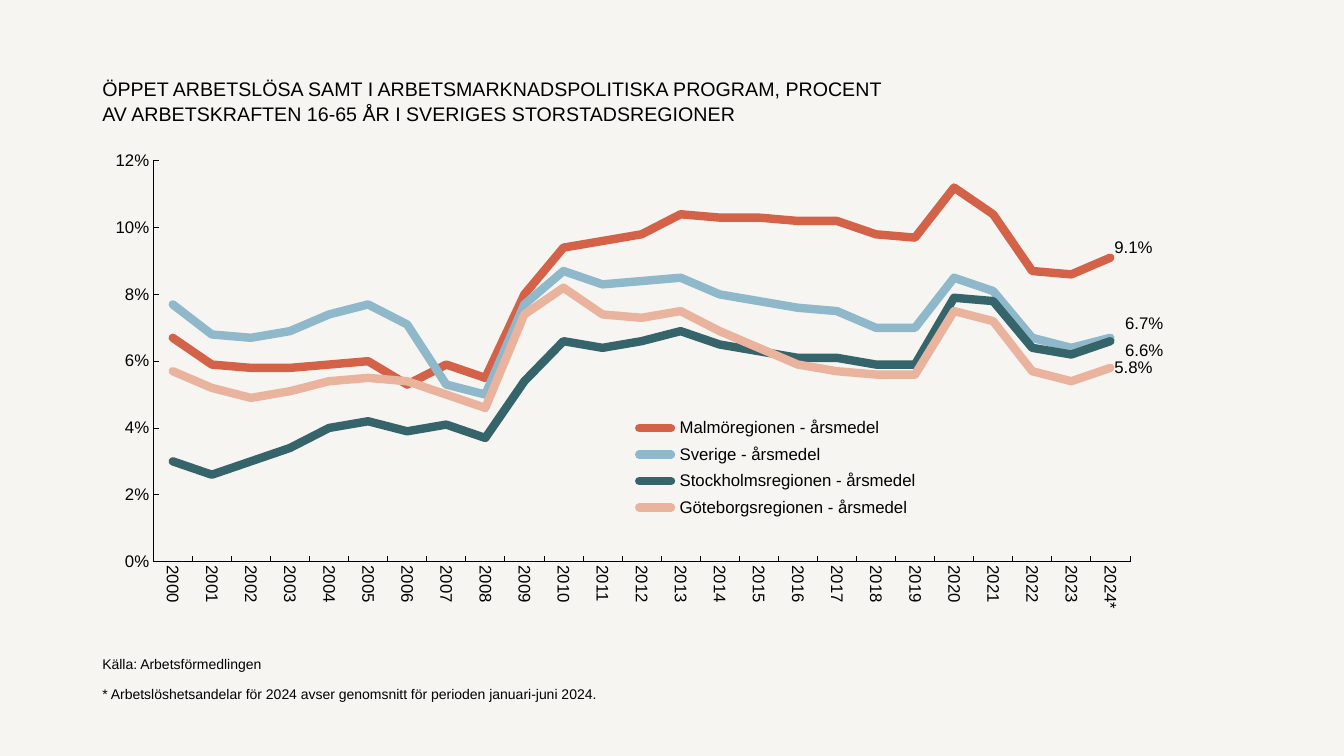
import pptx
import pptx.chart.data
import pptx.dml.color
import pptx.enum.chart
import pptx.enum.text
import pptx.oxml
import pptx.oxml.ns
import pptx.util

Pt = pptx.util.Pt
FONT = "Arial"
BLACK = "000000"
YEARS = [str(year) for year in range(2000, 2024)] + ["2024*"]

# Region, colour, end label offset (share of chart width and height), percent per year
REGIONS = [
    ("Malmöregionen", "D36248", (0, -0.02),
     [6.7, 5.9, 5.8, 5.8, 5.9, 6.0, 5.3, 5.9, 5.5, 8.0, 9.4, 9.6, 9.8, 10.4, 10.3,
      10.3, 10.2, 10.2, 9.8, 9.7, 11.2, 10.4, 8.7, 8.6, 9.1]),
    ("Sverige", "8FB8CA", (0.01, -0.03),
     [7.7, 6.8, 6.7, 6.9, 7.4, 7.7, 7.1, 5.3, 5.0, 7.7, 8.7, 8.3, 8.4, 8.5, 8.0,
      7.8, 7.6, 7.5, 7.0, 7.0, 8.5, 8.1, 6.7, 6.4, 6.7]),
    ("Stockholmsregionen", "36646B", (0.01, 0.02),
     [3.0, 2.6, 3.0, 3.4, 4.0, 4.2, 3.9, 4.1, 3.7, 5.4, 6.6, 6.4, 6.6, 6.9, 6.5,
      6.3, 6.1, 6.1, 5.9, 5.9, 7.9, 7.8, 6.4, 6.2, 6.6]),
    ("Göteborgsregionen", "EAB39E", (0, 0),
     [5.7, 5.2, 4.9, 5.1, 5.4, 5.5, 5.4, 5.0, 4.6, 7.4, 8.2, 7.4, 7.3, 7.5, 6.9,
      6.4, 5.9, 5.7, 5.6, 5.6, 7.5, 7.2, 5.7, 5.4, 5.8]),
]


def color(value):
    return pptx.dml.color.RGBColor.from_string(value)


def style_font(font, size):
    font.name = FONT
    font.size = Pt(size)
    font.color.rgb = color(BLACK)


def add_text(slide, text, left, top, width, height, size=10, line_spacing=1.0):
    box = slide.shapes.add_textbox(Pt(left), Pt(top), Pt(width), Pt(height))
    frame = box.text_frame
    frame.word_wrap = True
    paragraph = frame.paragraphs[0]
    paragraph.text = text
    paragraph.line_spacing = line_spacing
    for run in paragraph.runs:
        style_font(run.font, size)


def chart_xml(tag, content="", attributes=""):
    namespace = pptx.oxml.ns.nsdecls("c")
    return pptx.oxml.parse_xml(f"<c:{tag} {namespace} {attributes}>{content}</c:{tag}>")


def manual_layout(**settings):
    content = "".join(f'<c:{name} val="{value}"/>' for name, value in settings.items())
    return chart_xml("layout", f"<c:manualLayout>{content}</c:manualLayout>")


def style_axis(axis):
    axis.has_major_gridlines = False
    axis.major_tick_mark = pptx.enum.chart.XL_TICK_MARK.INSIDE
    axis.minor_tick_mark = pptx.enum.chart.XL_TICK_MARK.NONE
    axis.format.line.color.rgb = color(BLACK)
    axis.format.line.width = Pt(0.5)
    style_font(axis.tick_labels.font, 12)


def style_series(series, line_color, offset):
    series.smooth = False
    line = series.format.line
    line.color.rgb = color(line_color)
    line.width = Pt(6)
    series._element.spPr.find(pptx.oxml.ns.qn("a:ln")).set("cap", "rnd")

    # Value label on the last year only
    series.data_labels.show_value = False
    for leader in series.data_labels._element.findall(pptx.oxml.ns.qn("c:showLeaderLines")):
        leader.set("val", "0")
    label = series.points[len(YEARS) - 1].data_label
    style_font(label.font, 12)
    label.position = pptx.enum.chart.XL_LABEL_POSITION.RIGHT
    element = label._get_or_add_dLbl()
    element.insert(1, manual_layout(x=offset[0], y=offset[1]))
    element.insert(2, chart_xml("numFmt", attributes='formatCode="0.0%" sourceLinked="0"'))


def add_unemployment_chart(slide):
    data = pptx.chart.data.CategoryChartData(number_format="0.0%")
    data.categories = YEARS
    for region, _, _, percents in REGIONS:
        data.add_series(f" {region} - årsmedel",
                        [round(percent / 100, 3) for percent in percents])
    chart = slide.shapes.add_chart(
        pptx.enum.chart.XL_CHART_TYPE.LINE, Pt(73.5), Pt(103), Pt(765), Pt(340), data).chart
    chart.has_title = False
    style_font(chart.font, 12)
    chart.plots[0].vary_by_categories = False

    # Axes
    style_axis(chart.category_axis)
    body = chart.category_axis._element.find(
        pptx.oxml.ns.qn("c:txPr")).find(pptx.oxml.ns.qn("a:bodyPr"))
    body.set("rot", "5400000")
    body.set("vert", "horz")
    value_axis = chart.value_axis
    style_axis(value_axis)
    value_axis.minimum_scale = 0
    value_axis.maximum_scale = 0.12
    value_axis.major_unit = 0.02
    value_axis.tick_labels.number_format = "0%"
    value_axis.tick_labels.number_format_is_linked = False

    # Lines
    for series, (_, line_color, offset, _) in zip(chart.plots[0].series, REGIONS):
        style_series(series, line_color, offset)

    # Plot area and legend placement
    plot_area = chart._chartSpace.chart.plotArea
    for layout in plot_area.findall(pptx.oxml.ns.qn("c:layout")):
        plot_area.remove(layout)
    plot_area.insert(0, manual_layout(layoutTarget="inner", xMode="edge", yMode="edge",
                                      x=0.047, y=0.035, w=0.912, h=0.842))
    chart.has_legend = True
    legend = chart.legend
    legend.position = pptx.enum.chart.XL_LEGEND_POSITION.TOP
    legend.include_in_layout = False
    style_font(legend.font, 12)
    for layout in legend._element.findall(pptx.oxml.ns.qn("c:layout")):
        legend._element.remove(layout)
    legend._element.insert(1, manual_layout(xMode="edge", yMode="edge",
                                            x=0.49, y=0.56, w=0.28, h=0.24))


def main():
    presentation = pptx.Presentation()
    presentation.slide_width = Pt(960)
    presentation.slide_height = Pt(540)
    slide = presentation.slides.add_slide(presentation.slide_layouts[6])
    slide.background.fill.solid()
    slide.background.fill.fore_color.rgb = color("F6F5F1")

    # Heading
    add_text(slide, "ÖPPET ARBETSLÖSA SAMT I ARBETSMARKNADSPOLITISKA PROGRAM, PROCENT\v"
             "AV ARBETSKRAFTEN 16-65 ÅR I SVERIGES STORSTADSREGIONER",
             66, 50, 703, 37, size=14, line_spacing=1.07)

    add_unemployment_chart(slide)

    # Source and footnote
    add_text(slide, "Källa: Arbetsförmedlingen", 66, 464.5, 777, 19)
    add_text(slide, "* Arbetslöshetsandelar för 2024 avser genomsnitt för perioden "
             "januari-juni 2024.", 66, 486, 408, 19)

    presentation.save("out.pptx")


if __name__ == "__main__":
    main()
